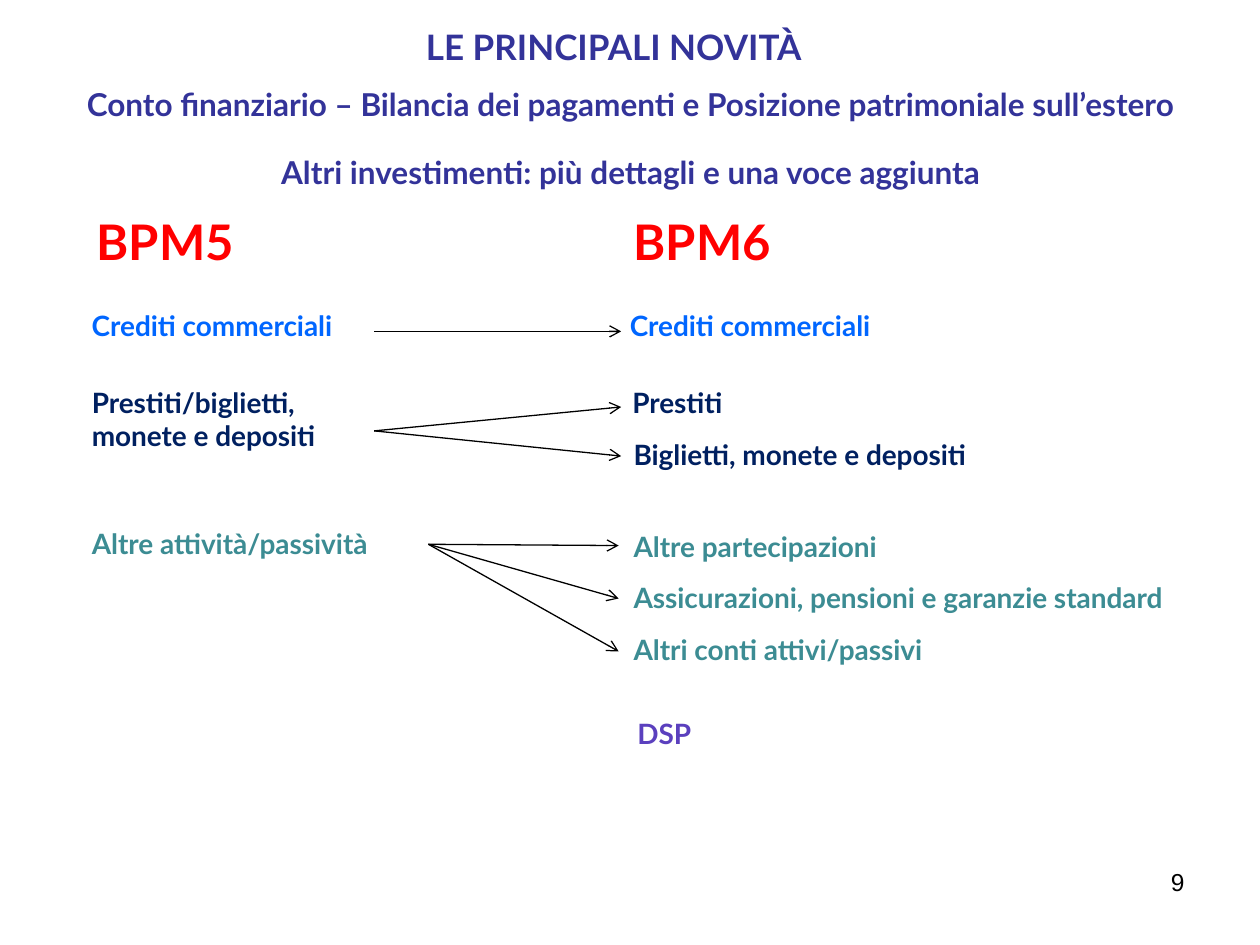
from dataclasses import dataclass

from pptx import Presentation
from pptx.dml.color import RGBColor
from pptx.enum.shapes import MSO_CONNECTOR
from pptx.enum.text import MSO_ANCHOR, MSO_AUTO_SIZE, PP_ALIGN
from pptx.oxml.ns import qn
from pptx.util import Inches, Pt
from lxml.etree import SubElement


@dataclass(frozen=True)
class Theme:
    """Colours, type sizes and fonts of the slide."""
    font: str = "Lato"
    number_font: str = "Arial"
    heading: str = "333399"
    manual: str = "FF0000"
    credit: str = "0066FF"
    loan: str = "002060"
    other: str = "3C8C93"
    sdr: str = "5B40BE"
    black: str = "000000"
    title_pt: int = 20
    subtitle_pt: int = 18
    manual_pt: int = 28
    item_pt: int = 16
    number_pt: int = 14
    gap_pt: int = 17
    line_pt: float = 0.75


T = Theme()
ITEM_H = 0.37
LEFT_X, RIGHT_X = 0.63, 4.93


def fill_text(s, lines, size, color, align=PP_ALIGN.LEFT, anchor=MSO_ANCHOR.TOP,
              font=T.font, bold=True, wrap=True, gap=0):
    """Write the lines as evenly formatted paragraphs."""
    tf = s.text_frame
    tf.auto_size = MSO_AUTO_SIZE.NONE
    tf.word_wrap = wrap
    tf.vertical_anchor = anchor
    tf.text = "\n".join(lines)
    for i, p in enumerate(tf.paragraphs):
        p.alignment = align
        p.space_before = Pt(gap if i else 0)
        p.font.name, p.font.size, p.font.bold = font, Pt(size), bold
        p.font.color.rgb = RGBColor.from_string(color)


def add_title(slide, text, box):
    """Move and format the title placeholder."""
    s = slide.shapes.title
    s.left, s.top, s.width, s.height = map(Inches, box)
    fill_text(s, [text], T.title_pt, T.heading, wrap=False)


def add_text(slide, lines, box, size, color, **style):
    """Add a text box."""
    s = slide.shapes.add_textbox(*map(Inches, box))
    fill_text(s, lines, size, color, **style)


def add_arrow(slide, start, end):
    """Add a thin line with an open arrowhead at its end."""
    s = slide.shapes.add_connector(MSO_CONNECTOR.STRAIGHT, *map(Inches, start + end))
    s.line.color.rgb = RGBColor.from_string(T.black)
    s.line.width = Pt(T.line_pt)
    SubElement(s.line._get_or_add_ln(), qn("a:tailEnd"), type="arrow")
    SubElement(s._element.spPr, qn("a:effectLst"))


def main():
    """Build and save the slide."""
    prs = Presentation()
    prs.slide_width, prs.slide_height = Inches(10), Inches(7.5)
    slide = prs.slides.add_slide(prs.slide_layouts[5])

    add_title(slide, "LE PRINCIPALI NOVITÀ", (3.28, 0.15, 3.55, 0.44))
    add_text(slide, ["Conto finanziario – Bilancia dei pagamenti e Posizione patrimoniale sull’estero",
                     "Altri investimenti: più dettagli e una voce aggiunta"],
             (-0.06, 0.64, 10.13, 0.91), T.subtitle_pt, T.heading,
             align=PP_ALIGN.CENTER, anchor=MSO_ANCHOR.MIDDLE, gap=T.gap_pt)

    for x, text in ((0.67, "BPM5"), (RIGHT_X, "BPM6")):
        add_text(slide, [text], (x, 1.63, 2.7, 0.57), T.manual_pt, T.manual)

    items = (
        (LEFT_X, 2.4, 3.87, T.credit, ["Crediti commerciali"]),
        (LEFT_X, 3.01, 2.92, T.loan, ["Prestiti/biglietti,", "monete e depositi"]),
        (LEFT_X, 4.13, 3.41, T.other, ["Altre attività/passività"]),
        (4.9, 2.4, 3.87, T.credit, ["Crediti commerciali"]),
        (4.92, 3.01, 5.03, T.loan, ["Prestiti"]),
        (RIGHT_X, 3.42, 4.23, T.loan, ["Biglietti, monete e depositi"]),
        (RIGHT_X, 4.15, 4.23, T.other, ["Altre partecipazioni"]),
        (RIGHT_X, 4.56, 5.07, T.other, ["Assicurazioni, pensioni e garanzie standard"]),
        (RIGHT_X, 4.97, 4.23, T.other, ["Altri conti attivi/passivi"]),
        (4.96, 5.64, 2.28, T.sdr, ["DSP"]),
    )
    for x, y, w, color, lines in items:
        height = ITEM_H + 0.27 * (len(lines) - 1)
        add_text(slide, lines, (x, y, w, height), T.item_pt, color)

    arrows = (
        ((2.97, 2.63), 4.93, (2.63,)),
        ((2.97, 3.42), 4.93, (3.23, 3.62)),
        ((3.4, 4.32), 4.91, (4.33, 4.75, 5.17)),
    )
    for start, end_x, end_ys in arrows:
        for end_y in end_ys:
            add_arrow(slide, start, (end_x, end_y))

    add_text(slide, ["9"], (7.17, 6.83, 2.33, 0.52), T.number_pt, T.black,
             align=PP_ALIGN.RIGHT, font=T.number_font, bold=False)
    prs.save("out.pptx")


if __name__ == "__main__":
    main()
